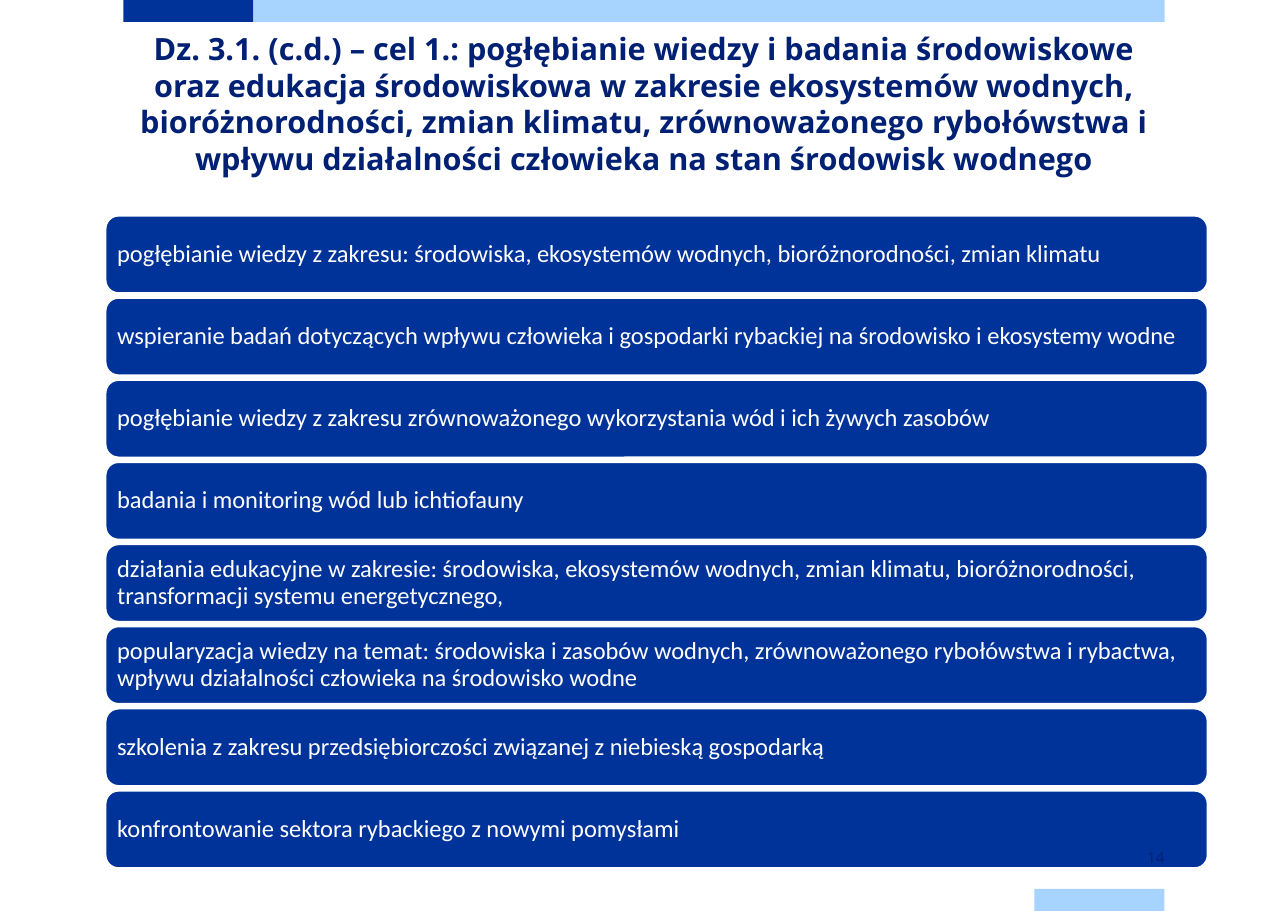
"""Build the slide listing environmental knowledge and education actions."""
import pptx
import pptx.util
import pptx.dml.color
import pptx.enum.shapes
import pptx.enum.text

Inches, Pt = pptx.util.Inches, pptx.util.Pt
SHAPES = pptx.enum.shapes.MSO_SHAPE
ALIGN = pptx.enum.text.PP_ALIGN
ANCHOR = pptx.enum.text.MSO_ANCHOR
COLOURS = {"blue": "003399", "light": "A6D3FF", "navy": "002073", "white": "FFFFFF"}

WIDTH, HEIGHT = 11.69, 8.27
MARGIN = 1.12
CONTENT_WIDTH = WIDTH - 2 * MARGIN
COLUMN = CONTENT_WIDTH / 8
BAR_HEIGHT = 0.2
LIST_TOP, LIST_BOTTOM, ROW_HEIGHT = 1.96, 7.88, 0.7

TITLE = (
    "Dz. 3.1. (c.d.) – cel 1.: pogłębianie wiedzy i badania środowiskowe oraz "
    "edukacja środowiskowa w zakresie ekosystemów wodnych, bioróżnorodności, "
    "zmian klimatu, zrównoważonego rybołówstwa i wpływu działalności człowieka "
    "na stan środowisk wodnego"
)
ACTIONS = [
    "pogłębianie wiedzy z zakresu: środowiska, ekosystemów wodnych, bioróżnorodności, zmian klimatu",
    "wspieranie badań dotyczących wpływu człowieka i gospodarki rybackiej na środowisko i ekosystemy wodne",
    "pogłębianie wiedzy z zakresu zrównoważonego wykorzystania wód i ich żywych zasobów",
    "badania i monitoring wód lub ichtiofauny",
    "działania edukacyjne w zakresie: środowiska, ekosystemów wodnych, zmian klimatu, "
    "bioróżnorodności, transformacji systemu energetycznego,",
    "popularyzacja wiedzy na temat: środowiska i zasobów wodnych, zrównoważonego rybołówstwa "
    "i rybactwa, wpływu działalności człowieka na środowisko wodne",
    "szkolenia z zakresu przedsiębiorczości związanej z niebieską gospodarką",
    "konfrontowanie sektora rybackiego z nowymi pomysłami",
]

presentation = pptx.Presentation()
presentation.slide_width, presentation.slide_height = Inches(WIDTH), Inches(HEIGHT)
slide = presentation.slides.add_slide(presentation.slide_layouts[6])


def add_block(kind, left, top, width, height, colour):
    shape = slide.shapes.add_shape(kind, *map(Inches, (left, top, width, height)))
    shape.shadow.inherit = False
    shape.fill.solid()
    shape.fill.fore_color.rgb = pptx.dml.color.RGBColor.from_string(COLOURS[colour])
    shape.line.fill.background()
    return shape


def write_text(shape, text, font, size, colour, align, anchor, inset=0):
    frame = shape.text_frame
    frame.word_wrap = True
    frame.vertical_anchor = anchor
    frame.margin_left = frame.margin_right = Inches(inset)
    frame.margin_top = frame.margin_bottom = Inches(inset)
    paragraph = frame.paragraphs[0]
    paragraph.text = text
    paragraph.alignment = align
    paragraph.font.name, paragraph.font.size = font, Pt(size)
    paragraph.font.color.rgb = pptx.dml.color.RGBColor.from_string(COLOURS[colour])
    return paragraph


for first, span, top, colour in [
    (0, 1, 0, "blue"),
    (1, 7, 0, "light"),
    (7, 1, HEIGHT - BAR_HEIGHT, "light"),
]:
    add_block(SHAPES.RECTANGLE, MARGIN + first * COLUMN, top, span * COLUMN, BAR_HEIGHT, colour)

title = slide.shapes.add_textbox(*map(Inches, (MARGIN, 0.27, CONTENT_WIDTH, 1.46)))
paragraph = write_text(title, TITLE, "Open Sans", 20, "navy", ALIGN.CENTER, ANCHOR.TOP)
paragraph.font.bold = True
paragraph.line_spacing = Pt(24)

row_step = (LIST_BOTTOM - ROW_HEIGHT - LIST_TOP) / (len(ACTIONS) - 1)
for row, action in enumerate(ACTIONS):
    box = add_block(SHAPES.ROUNDED_RECTANGLE, 0.96, LIST_TOP + row * row_step, 10, ROW_HEIGHT, "blue")
    box.line.color.rgb = pptx.dml.color.RGBColor.from_string(COLOURS["white"])
    box.line.width = Pt(1)
    paragraph = write_text(box, action, "Calibri", 16, "white", ALIGN.LEFT, ANCHOR.MIDDLE, 0.07)
    paragraph.line_spacing = 0.9

page_number = slide.shapes.add_textbox(*map(Inches, (MARGIN + 7 * COLUMN, 7.68, COLUMN, BAR_HEIGHT)))
write_text(page_number, "14", "Open Sans", 10, "navy", ALIGN.RIGHT, ANCHOR.MIDDLE)

presentation.save("out.pptx")
